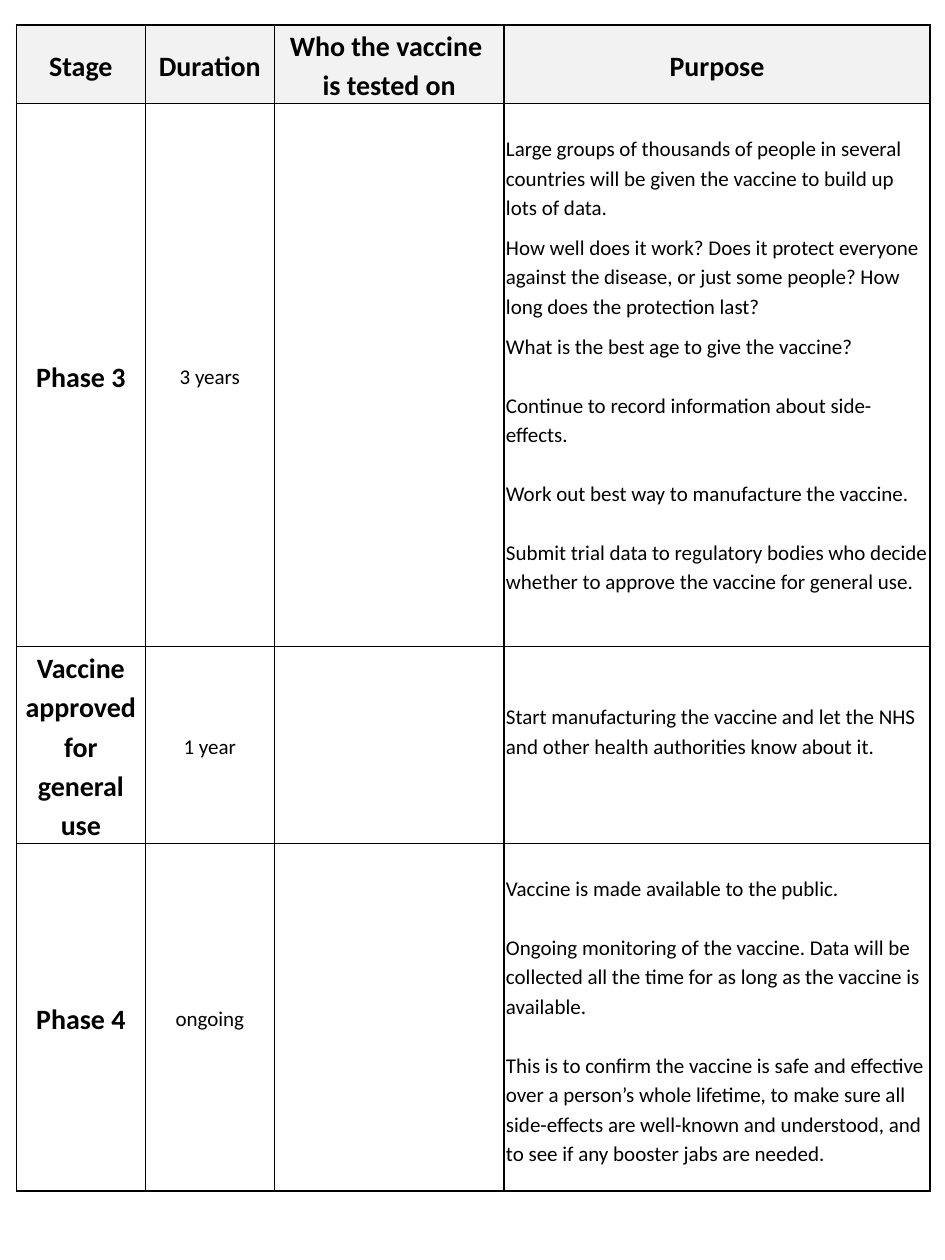
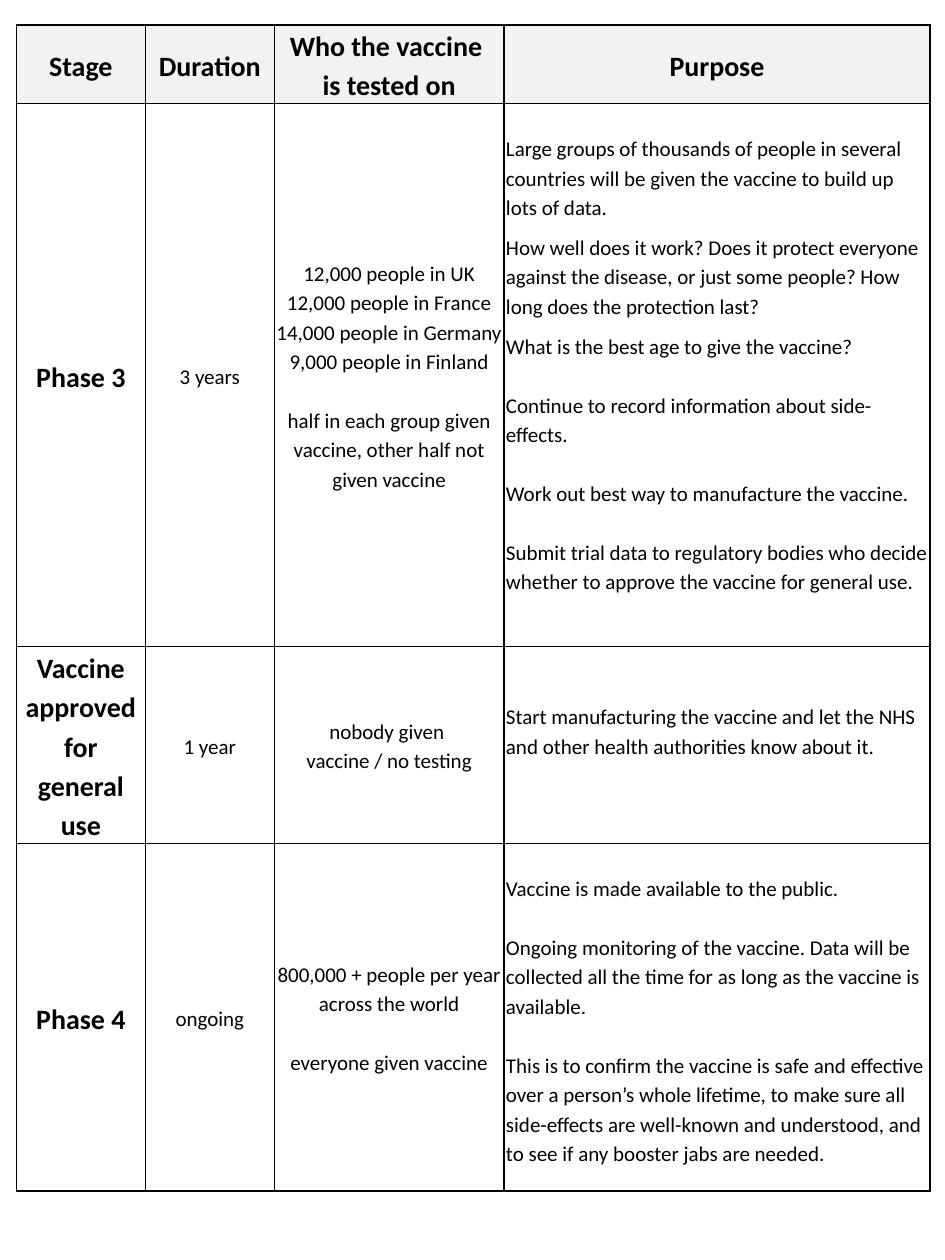
from lxml.etree import SubElement
from pptx import Presentation
from pptx.dml.color import RGBColor
from pptx.enum.text import MSO_ANCHOR, PP_ALIGN
from pptx.oxml.ns import qn
from pptx.util import Cm, Pt

COLORS = {"text": "000000", "border": "000000", "header": "F2F2F2"}
FONT = "Calibri"
BLANK_LINE = Pt(16.85)  # one 12 pt line at 1.15 spacing
SMALL_GAP = Pt(6)
COLUMN_WIDTHS = [2.6, 2.6, 4.63, 8.59]
ROW_HEIGHTS = [1.55, 10.95, 3.89, 7.01]
STAGE, DURATION, TESTERS, PURPOSE = range(4)

HEADERS = ["Stage", "Duration", "Who the vaccine \vis tested on", "Purpose"]

# Each cell holds paragraphs as (space before, text).
STAGES = [
    [
        [(0, "Phase 3")],
        [(0, "3 years")],
        [
            (0, "12,000 people in UK\v12,000 people in France\v14,000 people in Germany"),
            (0, "9,000 people in Finland"),
            (BLANK_LINE, "half in each group given vaccine, other half not given vaccine"),
        ],
        [
            (0, "Large groups of thousands of people in several countries will be "
                "given the vaccine to build up lots of data."),
            (SMALL_GAP, "How well does it work? Does it protect everyone against the disease, "
                        "or just some people? How long does the protection last?"),
            (SMALL_GAP, "What is the best age to give the vaccine?"),
            (BLANK_LINE, "Continue to record information about side-effects."),
            (BLANK_LINE, "Work out best way to manufacture the vaccine."),
            (BLANK_LINE, "Submit trial data to regulatory bodies who decide whether to "
                         "approve the vaccine for general use."),
        ],
    ],
    [
        [(0, "Vaccine approved for general use")],
        [(0, "1 year")],
        [(0, "nobody given \vvaccine / no testing")],
        [(0, "Start manufacturing the vaccine and let the NHS and other health "
             "authorities know about it.")],
    ],
    [
        [(0, "Phase 4")],
        [(0, "ongoing")],
        [
            (0, "800,000 + people per year across the world"),
            (BLANK_LINE, "everyone given vaccine"),
        ],
        [
            (0, "Vaccine is made available to the public."),
            (BLANK_LINE, "Ongoing monitoring of the vaccine. Data will be collected all the "
                         "time for as long as the vaccine is available."),
            (BLANK_LINE, "This is to confirm the vaccine is safe and effective over a person’s "
                         "whole lifetime, to make sure all side-effects are well-known and "
                         "understood, and to see if any booster jabs are needed."),
        ],
    ],
]


def format_cell(cell, fill=None):
    """Set the margins, fill and borders that every cell shares."""
    cell.margin_left = cell.margin_right = Cm(0.04)
    cell.margin_top = cell.margin_bottom = 0
    cell.vertical_anchor = MSO_ANCHOR.MIDDLE
    properties = cell._tc.get_or_add_tcPr()
    for side in ("a:lnL", "a:lnR", "a:lnT", "a:lnB"):
        line = SubElement(properties, qn(side), w=str(Pt(1)))
        SubElement(SubElement(line, qn("a:solidFill")), qn("a:srgbClr"), val=COLORS["border"])
    if fill:
        cell.fill.solid()
        cell.fill.fore_color.rgb = RGBColor.from_string(fill)
    else:
        cell.fill.background()


def write_cell(cell, paragraphs, size, bold, alignment):
    cell.text_frame.text = "\n".join(text for _, text in paragraphs)
    for paragraph, (space_before, _) in zip(cell.text_frame.paragraphs, paragraphs):
        paragraph.alignment = alignment
        paragraph.line_spacing = 1.15
        paragraph.space_before = space_before
        for run in paragraph.runs:
            run.font.name = FONT
            run.font.size = Pt(size)
            run.font.bold = bold
            run.font.color.rgb = RGBColor.from_string(COLORS["text"])


presentation = Presentation()
presentation.slide_width = Cm(19.05)
presentation.slide_height = Cm(25.4)

for show_testers in (False, True):
    slide = presentation.slides.add_slide(presentation.slide_layouts[6])
    table = slide.shapes.add_table(
        len(ROW_HEIGHTS), len(COLUMN_WIDTHS), Cm(0.33), Cm(0.5),
        Cm(sum(COLUMN_WIDTHS)), Cm(sum(ROW_HEIGHTS)),
    ).table
    table.first_row = False
    table.horz_banding = False
    for column, width in zip(table.columns, COLUMN_WIDTHS):
        column.width = Cm(width)
    for row, height in zip(table.rows, ROW_HEIGHTS):
        row.height = Cm(height)

    for column_index, header in enumerate(HEADERS):
        cell = table.cell(0, column_index)
        format_cell(cell, COLORS["header"])
        write_cell(cell, [(0, header)], 16, True, PP_ALIGN.CENTER)

    for row_index, stage in enumerate(STAGES, start=1):
        for column_index, paragraphs in enumerate(stage):
            cell = table.cell(row_index, column_index)
            format_cell(cell)
            if column_index == TESTERS and not show_testers:
                continue
            is_stage = column_index == STAGE
            alignment = PP_ALIGN.LEFT if column_index == PURPOSE else PP_ALIGN.CENTER
            write_cell(cell, paragraphs, 16 if is_stage else 12, is_stage, alignment)

        # Long purposes start one line below the top; a short one sits above the middle.
        purpose_cell = table.cell(row_index, PURPOSE)
        if len(stage[PURPOSE]) > 1:
            purpose_cell.vertical_anchor = MSO_ANCHOR.TOP
            purpose_cell.margin_top = BLANK_LINE
        else:
            purpose_cell.margin_bottom = BLANK_LINE

presentation.save("out.pptx")
